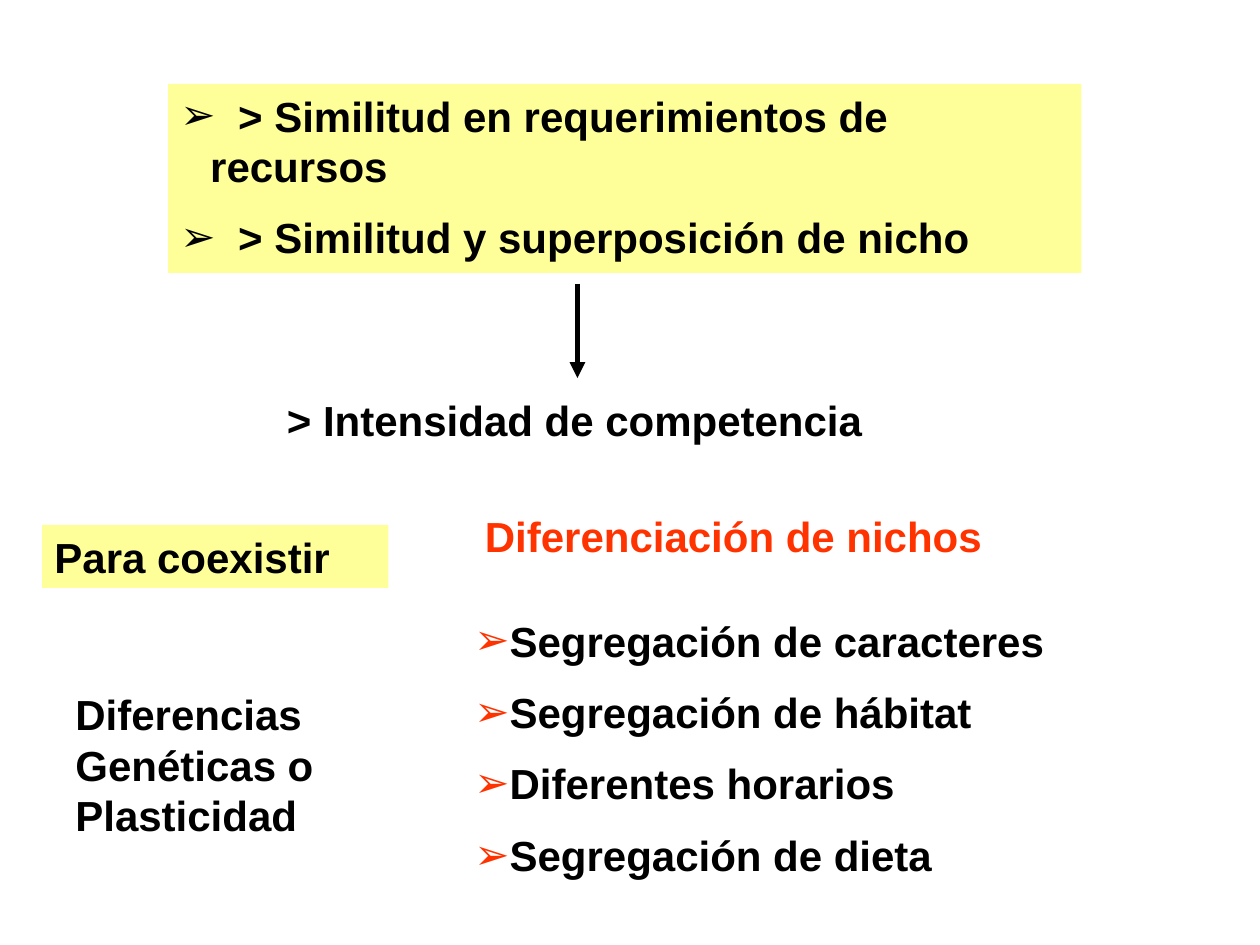
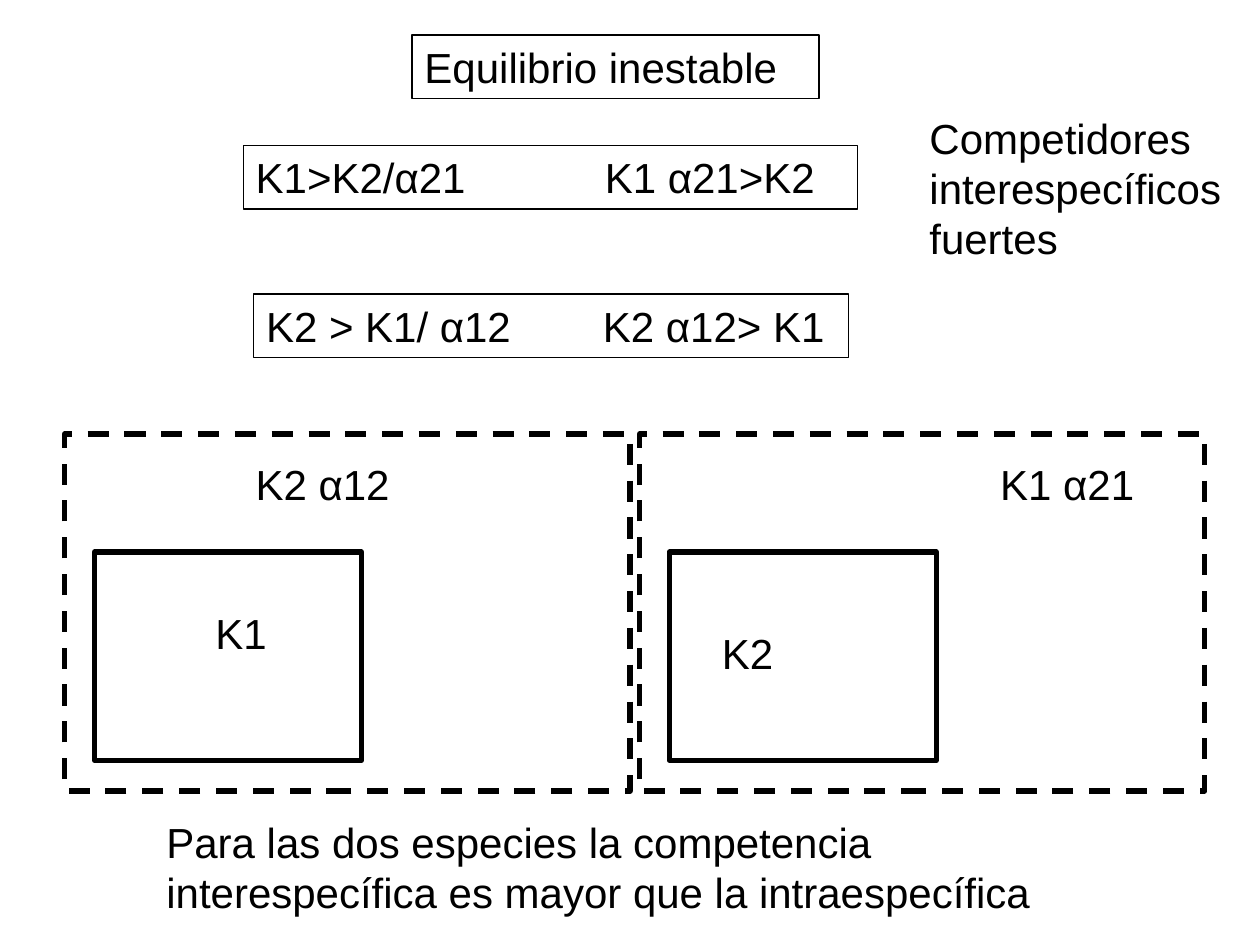
from pptx import Presentation
from pptx.dml.color import RGBColor
from pptx.enum.dml import MSO_LINE_DASH_STYLE as Dash
from pptx.enum.shapes import MSO_CONNECTOR as Connector, MSO_SHAPE as Shape
from pptx.oxml.ns import qn
from pptx.util import Pt
from lxml.etree import SubElement

BLACK = "000000"
RED = "FF3300"
YELLOW = "FFFF99"
WHITE = "FFFFFF"


def color(value):
    return RGBColor.from_string(value)


def add_text(page, place, lines, ink=BLACK, bold=False, fill=None, border=False,
             bullet=None, tabs=(), inset=7.2):
    box = page.shapes.add_textbox(*map(Pt, place))
    if fill:
        box.fill.solid()
        box.fill.fore_color.rgb = color(fill)
    if border:
        box.line.color.rgb = color(BLACK)
        box.line.width = Pt(0.75)
    frame = box.text_frame
    frame.word_wrap = True
    frame.margin_left = Pt(inset)
    for index, line in enumerate(lines):
        para = frame.add_paragraph() if index else frame.paragraphs[0]
        para.text = line
        if index:
            para.space_before = Pt(12)
        props = para._p.get_or_add_pPr()
        if bullet:
            props.set("marL", str(Pt(17)))
            props.set("indent", str(-Pt(17)))
            tint = SubElement(props, qn("a:buClr"))
            SubElement(tint, qn("a:srgbClr"), val=bullet)
            SubElement(props, qn("a:buFont"), typeface="Arial")
            SubElement(props, qn("a:buChar"), char="➢")
        if tabs:
            stops = SubElement(props, qn("a:tabLst"))
            for stop in tabs:
                SubElement(stops, qn("a:tab"), pos=str(Pt(stop)), algn="l")
        para.font.name = "Arial"
        para.font.size = Pt(24)
        para.font.bold = bold
        para.font.color.rgb = color(ink)


deck = Presentation()
deck.slide_width = Pt(720)
deck.slide_height = Pt(540)
blank = deck.slide_layouts[6]

niches = deck.slides.add_slide(blank)
add_text(niches, (96, 48, 522, 108),
         ["\t> Similitud en requerimientos de recursos",
          "\t> Similitud y superposición de nicho"],
         bold=True, fill=YELLOW, bullet=BLACK, tabs=(16, 33))
add_text(niches, (150, 222, 432, 36), ["> Intensidad de competencia"],
         bold=True, fill=WHITE, inset=14)

arrow = niches.shapes.add_connector(Connector.STRAIGHT, Pt(330), Pt(162), Pt(330), Pt(216))
arrow.line.color.rgb = color(BLACK)
arrow.line.width = Pt(3)
SubElement(arrow.line._get_or_add_ln(), qn("a:tailEnd"), type="triangle")
SubElement(arrow._element.spPr, qn("a:effectLst"))

add_text(niches, (24, 300, 198, 36), ["Para coexistir"], bold=True, fill=YELLOW)
add_text(niches, (270, 288, 324, 36), ["Diferenciación de nichos"], ink=RED, bold=True)
add_text(niches, (264, 348, 378, 166),
         ["Segregación de caracteres", "Segregación de hábitat",
          "Diferentes horarios", "Segregación de dieta"],
         bold=True, bullet=RED)
add_text(niches, (36, 390, 198, 94), ["Diferencias Genéticas o Plasticidad"],
         bold=True, fill=WHITE)

balance = deck.slides.add_slide(blank)
add_text(balance, (235.5, 20, 232.5, 36.5), ["Equilibrio inestable"], border=True)
add_text(balance, (139, 83, 351, 36.5), ["K1>K2/α21\tK1 α21>K2"], border=True, tabs=(199.5,))
add_text(balance, (145, 168, 340, 36.5), ["K2 > K1/ α12\tK2 α12> K1"], border=True, tabs=(192.5,))
add_text(balance, (524, 60.5, 182, 94), ["Competidores interespecíficos fuertes"])

for left in (37, 365.5):
    for place, dash in (((left, 248, 323, 204), Dash.DASH),
                        ((left + 17, 315.5, 152.5, 119), Dash.SOLID)):
        frame_box = balance.shapes.add_shape(Shape.RECTANGLE, *map(Pt, place))
        frame_box.shadow.inherit = False
        frame_box.fill.background()
        frame_box.line.color.rgb = color(BLACK)
        frame_box.line.width = Pt(3)
        frame_box.line.dash_style = dash

for label, left, top, width in (("K2 α12", 139, 258.5, 102), ("K1 α21", 564.5, 258.5, 102),
                                ("K1", 116, 343.5, 51), ("K2", 405.5, 355, 102)):
    add_text(balance, (left, top, width, 36), [label])
add_text(balance, (88, 463, 572, 65),
         ["Para las dos especies la competencia interespecífica es mayor que la intraespecífica"])

deck.save("out.pptx")
